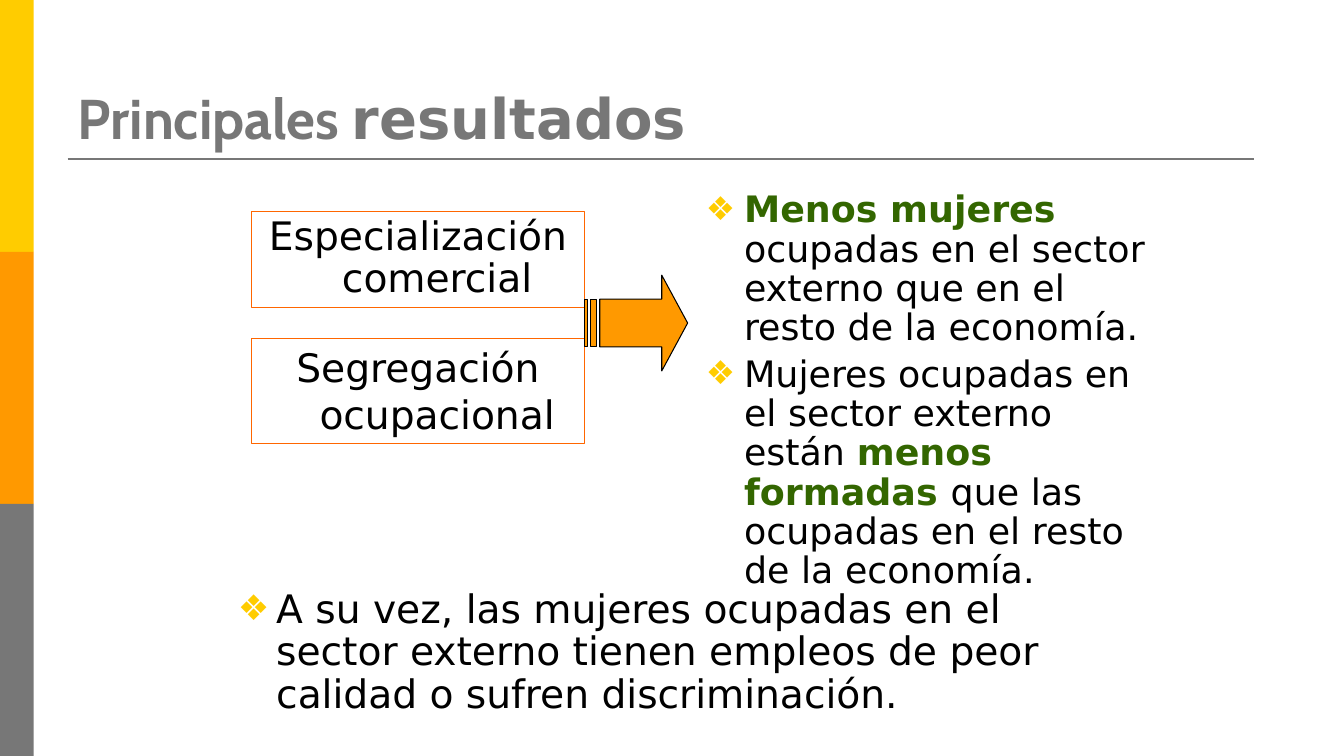
from lxml.etree import SubElement
from pptx import Presentation
from pptx.dml.color import RGBColor
from pptx.enum.shapes import MSO_CONNECTOR, MSO_SHAPE
from pptx.enum.text import MSO_ANCHOR, MSO_AUTO_SIZE, PP_ALIGN
from pptx.oxml.ns import qn
from pptx.util import Inches, Pt

YELLOW = RGBColor(0xFF, 0xCC, 0x00)
ORANGE = RGBColor(0xFF, 0x99, 0x00)
BORDER = RGBColor(0xFF, 0x66, 0x00)
GREY = RGBColor(0x77, 0x77, 0x77)
GREEN = RGBColor(0x33, 0x66, 0x00)
BLACK = RGBColor(0, 0, 0)

WIDTH, HEIGHT = Inches(13.33), Inches(7.5)
BAND_HEIGHT = HEIGHT // 3
MARGIN = Inches(0.67)
CAUSE_LEFT, CAUSE_WIDTH = Inches(2.49), Inches(3.31)
HANGING = Inches(0.38)
BODY_FONT = "DejaVu Sans"


def add_run(paragraph, text, size, color=BLACK, bold=False, font=BODY_FONT):
    run = paragraph.add_run()
    run.text = text
    run.font.size = Pt(size)
    run.font.color.rgb = color
    run.font.bold = bold
    run.font.name = font


def hang(paragraph):
    """Indent the paragraph, with its first line back at the margin."""
    properties = paragraph._p.get_or_add_pPr()
    properties.set("marL", str(HANGING))
    properties.set("indent", str(-HANGING))
    return properties


def add_bullet(paragraph):
    properties = hang(paragraph)
    color = SubElement(properties, qn("a:buClr"))
    SubElement(color, qn("a:srgbClr"), val=str(YELLOW))
    SubElement(properties, qn("a:buSzPct"), val="90000")
    SubElement(properties, qn("a:buFont"), typeface=BODY_FONT)
    SubElement(properties, qn("a:buChar"), char="❖")


def place(shape, left, top, width, height):
    shape.left, shape.top, shape.width, shape.height = left, top, width, height


def fill_title(title):
    place(title, MARGIN, Inches(0.3), Inches(12), Inches(1.25))
    frame = title.text_frame
    frame.auto_size = MSO_AUTO_SIZE.NONE
    frame.vertical_anchor = MSO_ANCHOR.BOTTOM
    heading = frame.paragraphs[0]
    heading.alignment = PP_ALIGN.LEFT
    add_run(heading, "Principales ", 40, GREY, bold=True, font="Cabin")
    add_run(heading, "resultados", 40, GREY, bold=True)


def fill_list(body, items, size):
    """Write each item as a bullet; an item is a list of (text, emphasised)."""
    frame = body.text_frame
    frame.auto_size = MSO_AUTO_SIZE.NONE
    for index, item in enumerate(items):
        paragraph = frame.add_paragraph() if index else frame.paragraphs[0]
        paragraph.line_spacing = 0.9
        add_bullet(paragraph)
        for text, emphasised in item:
            add_run(paragraph, text, size, GREEN if emphasised else BLACK, emphasised)


def add_preset(slide, preset, left, top, width, height, fill=None, line=None):
    shape = slide.shapes.add_shape(preset, left, top, width, height)
    shape.shadow.inherit = False
    if fill is None:
        shape.fill.background()
    else:
        shape.fill.solid()
        shape.fill.fore_color.rgb = fill
    if line is None:
        shape.line.fill.background()
    else:
        shape.line.color.rgb = line
        shape.line.width = Pt(0.75)
    return shape


def add_title_rule(slide):
    rule = slide.shapes.add_connector(
        MSO_CONNECTOR.STRAIGHT, MARGIN, Inches(1.58), Inches(12.44), Inches(1.58))
    rule.line.color.rgb = GREY
    rule.line.width = Pt(1.5)
    SubElement(rule._element.spPr, qn("a:effectLst"))


def add_cause(slide, text, top, height, line_spacing):
    box = add_preset(slide, MSO_SHAPE.RECTANGLE, CAUSE_LEFT, top,
                     CAUSE_WIDTH, height, line=BORDER)
    frame = box.text_frame
    frame.word_wrap = True
    frame.auto_size = MSO_AUTO_SIZE.SHAPE_TO_FIT_TEXT
    frame.vertical_anchor = MSO_ANCHOR.TOP
    paragraph = frame.paragraphs[0]
    paragraph.alignment = PP_ALIGN.CENTER
    paragraph.line_spacing = line_spacing
    hang(paragraph)
    add_run(paragraph, text, 28)


def add_arrow(slide):
    arrow = add_preset(slide, MSO_SHAPE.STRIPED_RIGHT_ARROW, CAUSE_LEFT + CAUSE_WIDTH,
                       Inches(2.73), Inches(1.02), Inches(0.95), ORANGE, BLACK)
    arrow.adjustments[0] = 0.5
    arrow.adjustments[1] = 0.27


def main():
    presentation = Presentation()
    presentation.slide_width, presentation.slide_height = WIDTH, HEIGHT
    slide = presentation.slides.add_slide(presentation.slide_layouts[3])
    title, effects, consequence = slide.placeholders

    for row, color in enumerate((YELLOW, ORANGE, GREY)):
        add_preset(slide, MSO_SHAPE.RECTANGLE, 0, row * BAND_HEIGHT,
                   WIDTH // 40, BAND_HEIGHT, color)
    add_title_rule(slide)
    fill_title(title)

    add_cause(slide, "Especialización comercial", Inches(2.1), Inches(0.95), 0.9)
    add_cause(slide, "Segregación ocupacional", Inches(3.36), Inches(1.04), 1.0)
    add_arrow(slide)

    place(effects, Inches(6.9), Inches(1.85), Inches(4.76), Inches(3.73))
    fill_list(effects, [
        [("Menos mujeres ", True),
         ("ocupadas en el sector externo que en el resto de la economía.", False)],
        [("Mujeres ocupadas en el sector externo están ", False),
         ("menos formadas ", True),
         ("que las ocupadas en el resto de la economía.", False)],
    ], 26)
    place(consequence, Inches(2.26), Inches(5.8), Inches(9.06), Inches(1.37))
    fill_list(consequence, [
        [("A su vez, las mujeres ocupadas en el sector externo tienen empleos "
          "de peor calidad o sufren discriminación.", False)],
    ], 28)

    presentation.save("out.pptx")


if __name__ == "__main__":
    main()
